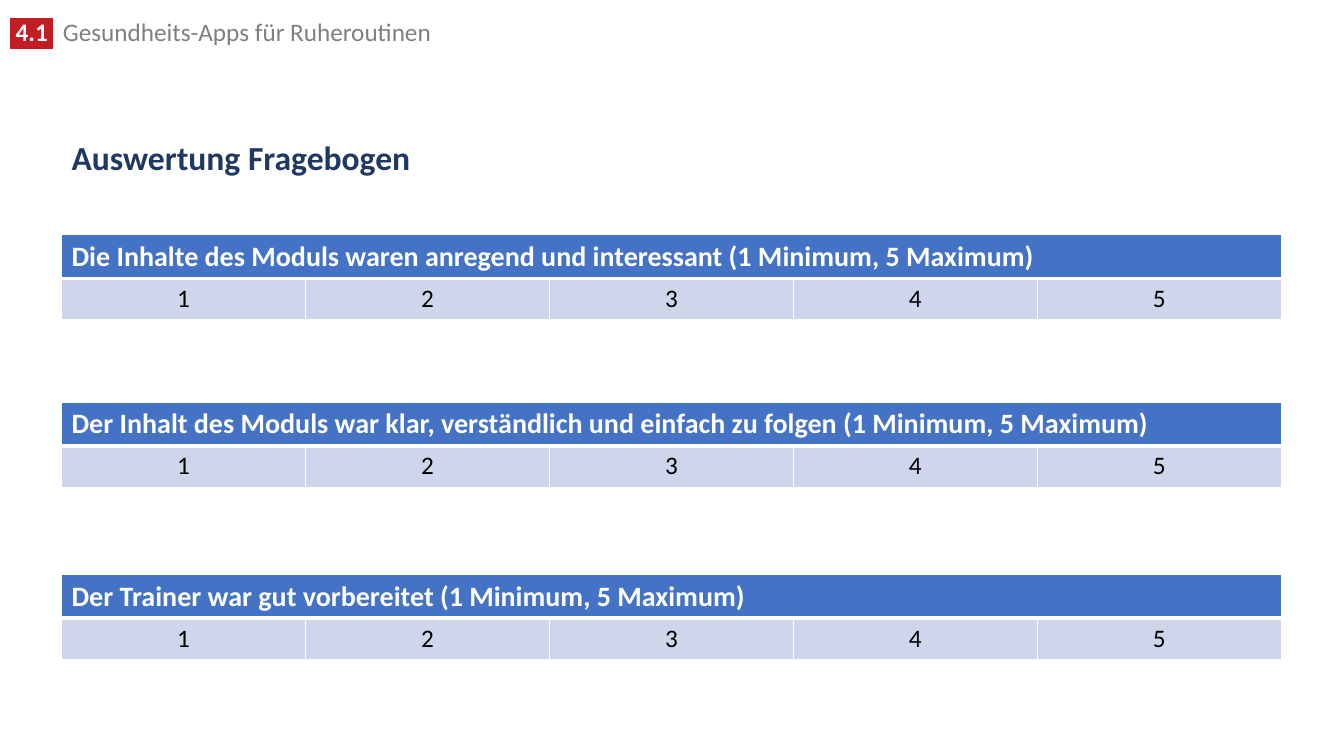
from dataclasses import dataclass

from lxml import etree
from pptx import Presentation
from pptx.dml.color import RGBColor
from pptx.enum.text import MSO_ANCHOR as Anchor, MSO_AUTO_SIZE as AutoSize, PP_ALIGN as Align
from pptx.oxml.ns import qn
from pptx.util import Inches, Pt

WHITE, BLACK, GREY = "FFFFFF", "000000", "808080"
RED, NAVY, BLUE, PALE = "C01E24", "203864", "4472C4", "CFD5EA"
LEFT, WIDTH, ROW_HEIGHT = 0.61, 12.1, 0.41
RATINGS = ["1", "2", "3", "4", "5"]


@dataclass
class Style:
    size: int
    color: str
    bold: bool = False
    font: str = "Calibri"
    highlight: str = ""


@dataclass
class Question:
    top: float
    text: str


QUESTIONS = [
    Question(2.33, "Die Inhalte des Moduls waren anregend und interessant (1 Minimum, 5 Maximum)"),
    Question(3.99, "Der Inhalt des Moduls war klar, verständlich und einfach zu folgen (1 Minimum, 5 Maximum)"),
    Question(5.7, "Der Trainer war gut vorbereitet (1 Minimum, 5 Maximum)"),
]
QUESTION_STYLE = Style(20, WHITE, bold=True)
RATING_STYLE = Style(18, BLACK)


def set_color(color_format, value: str) -> None:
    color_format.rgb = RGBColor.from_string(value)


def add_run(paragraph, text: str, style: Style) -> None:
    run = paragraph.add_run()
    run.text = text
    run.font.size = Pt(style.size)
    run.font.bold = style.bold
    run.font.name = style.font
    run.font.fill.solid()
    set_color(run.font.fill.fore_color, style.color)
    if style.highlight:
        properties = run.font._element
        highlight = etree.Element(qn("a:highlight"))
        etree.SubElement(highlight, qn("a:srgbClr"), val=style.highlight)
        properties.find(qn("a:solidFill")).addnext(highlight)


def set_borders(cell, top: float, bottom: float) -> None:
    properties = cell._tc.get_or_add_tcPr()
    widths = {"a:lnL": 1, "a:lnR": 1, "a:lnT": top, "a:lnB": bottom}
    for index, (tag, width) in enumerate(widths.items()):
        line = etree.Element(qn(tag), w=str(Pt(width)))
        fill = etree.SubElement(line, qn("a:solidFill"))
        etree.SubElement(fill, qn("a:srgbClr"), val=WHITE)
        properties.insert(index, line)


def add_question(slide, question: Question) -> None:
    frame = slide.shapes.add_table(2, len(RATINGS), Inches(LEFT), Inches(question.top),
                                   Inches(WIDTH), Inches(2 * ROW_HEIGHT))
    table = frame.table
    for column, rating in enumerate(RATINGS):
        header, cell = table.cell(0, column), table.cell(1, column)
        for target, color in ((header, BLUE), (cell, PALE)):
            target.fill.solid()
            set_color(target.fill.fore_color, color)
        set_borders(header, top=1, bottom=3)
        set_borders(cell, top=3, bottom=1)
        paragraph = cell.text_frame.paragraphs[0]
        paragraph.alignment = Align.CENTER
        add_run(paragraph, rating, RATING_STYLE)
    table.cell(0, 0).merge(table.cell(0, len(RATINGS) - 1))
    add_run(table.cell(0, 0).text_frame.paragraphs[0], question.text, QUESTION_STYLE)


def add_module_label(slide) -> None:
    box = slide.shapes.add_textbox(0, Inches(0.11), Inches(9.52), Inches(0.42))
    box.text_frame.word_wrap = True
    paragraph = box.text_frame.paragraphs[0]
    paragraph.line_spacing = 0.8
    add_run(paragraph, " 4.1 ", Style(18, WHITE, bold=True, highlight=RED))
    add_run(paragraph, " ", Style(24, BLACK, font="Arial"))
    add_run(paragraph, "Gesundheits-Apps für Ruheroutinen", Style(18, GREY))


def set_title(slide) -> None:
    title = slide.shapes.title
    title.left, title.top = Inches(LEFT), Inches(1.18)
    title.width, title.height = Inches(WIDTH), Inches(0.8)
    title.text_frame.auto_size = AutoSize.NONE
    title.text_frame.vertical_anchor = Anchor.MIDDLE
    paragraph = title.text_frame.paragraphs[0]
    paragraph.alignment = Align.LEFT
    paragraph.line_spacing = 0.9
    add_run(paragraph, "Auswertung Fragebogen", Style(24, NAVY, bold=True))


def main() -> None:
    presentation = Presentation()
    presentation.slide_width, presentation.slide_height = Inches(13.33), Inches(7.5)
    slide = presentation.slides.add_slide(presentation.slide_layouts[5])

    # Module label and title
    add_module_label(slide)
    set_title(slide)

    # Rating tables
    for question in QUESTIONS:
        add_question(slide, question)

    presentation.save("out.pptx")


if __name__ == "__main__":
    main()
